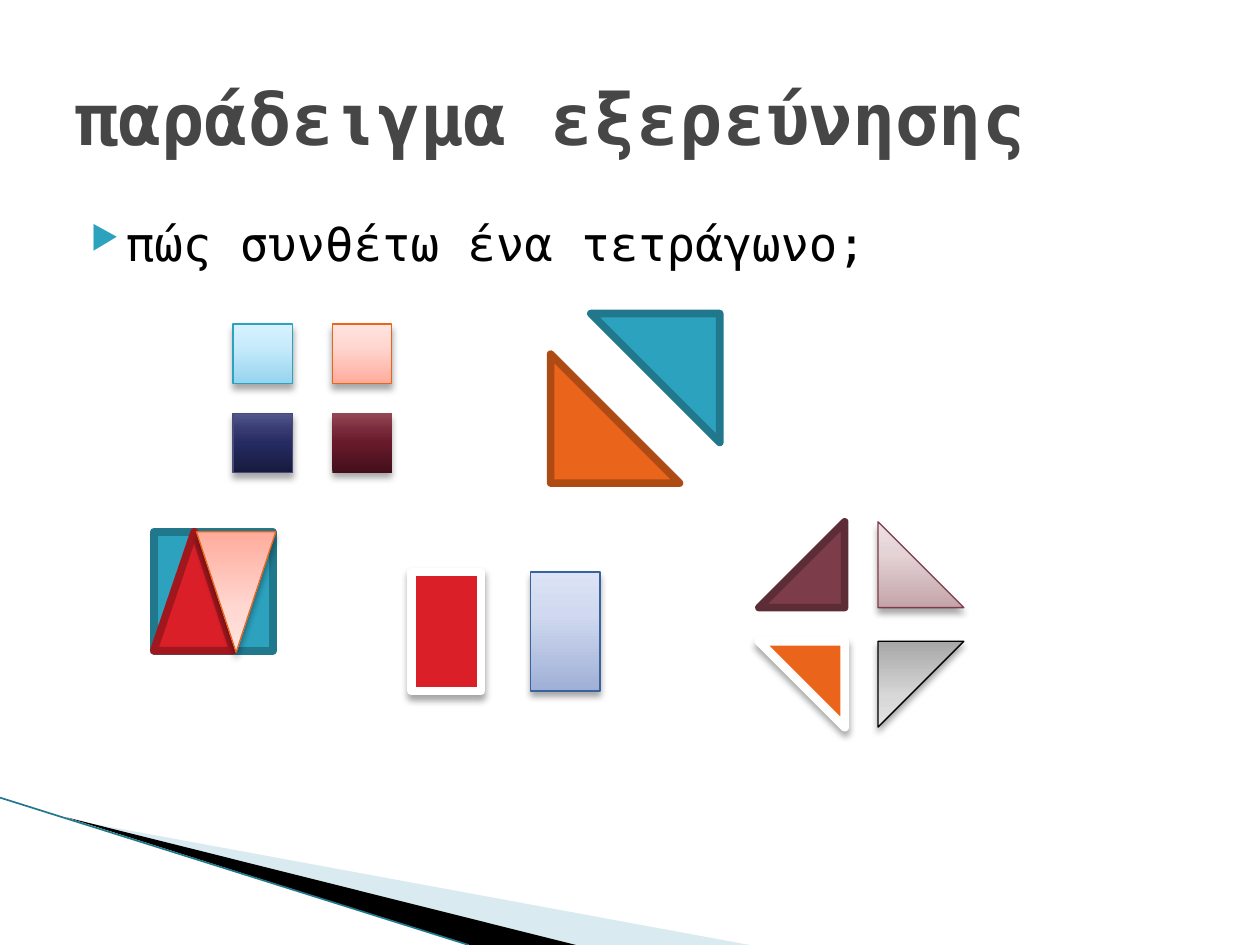
from lxml import etree
from pptx import Presentation
from pptx.dml.color import RGBColor
from pptx.enum.shapes import MSO_CONNECTOR, MSO_SHAPE
from pptx.enum.text import MSO_ANCHOR
from pptx.oxml.ns import qn
from pptx.util import Cm, Pt

SQUARE = MSO_SHAPE.RECTANGLE
RIGHT_TRIANGLE = MSO_SHAPE.RIGHT_TRIANGLE
TRIANGLE = MSO_SHAPE.ISOSCELES_TRIANGLE
STRAIGHT = MSO_CONNECTOR.STRAIGHT
MIDDLE = MSO_ANCHOR.MIDDLE

FONT = "DejaVu Sans Mono"
BLACK = RGBColor(0x00, 0x00, 0x00)
WHITE = RGBColor(0xFF, 0xFF, 0xFF)
GREY = RGBColor(0x46, 0x46, 0x46)
TEAL = RGBColor(0x2D, 0xA2, 0xBF)
DARK_TEAL = RGBColor(0x21, 0x78, 0x8D)
PALE_BLUE = RGBColor(0xA0, 0xCB, 0xDC)
ORANGE = RGBColor(0xEB, 0x64, 0x1B)
DARK_ORANGE = RGBColor(0xAE, 0x4A, 0x14)
RED = RGBColor(0xDA, 0x1F, 0x28)
DARK_RED = RGBColor(0xA1, 0x17, 0x1E)
PLUM = RGBColor(0x7D, 0x3C, 0x4A)
DARK_PLUM = RGBColor(0x5C, 0x2C, 0x37)
BLUE = RGBColor(0x39, 0x63, 0x9D)
INDIGO = RGBColor(0x47, 0x4B, 0x78)


def gradient(positions, *colours):
    """Pair stop positions with colours, from the bottom up."""
    return [(pos, RGBColor.from_string(c)) for pos, c in zip(positions, colours)]


SOFT, DEEP = (0, 65, 100), (0, 50, 70, 100)
SKY_FADE = gradient(SOFT, "96D4EE", "C9ECFC", "D7F2FF")
PEACH_FADE = gradient(SOFT, "FFAC9C", "FFD8D2", "FFE4DF")
BLUE_FADE = gradient(SOFT, "9FAFD6", "D0D9EF", "DCE3F6")
PLUM_FADE = gradient(SOFT, "C4A5A9", "E5D4D7", "EEE0E2")
GREY_FADE = gradient(SOFT, "A7A7A7", "D8D8D8", "E4E4E4")
NAVY_FADE = gradient(DEEP, "171A3D", "262B61", "353970", "51568D")
WINE_FADE = gradient(DEEP, "420F1A", "681A2B", "772939", "944755")

THIN, THICK, FRAME = 0.75, 4.33, 5


def add_child(parent, tag, **attributes):
    child = etree.SubElement(parent, qn(tag))
    for name, value in attributes.items():
        child.set(name, str(value))
    return child


def add_colour(parent, colour, alpha=None):
    node = add_child(parent, "a:srgbClr", val=colour)
    if alpha is not None:
        add_child(node, "a:alpha", val=alpha * 1000)


def fill_gradient(shape, stops):
    shape.fill.gradient()
    shape.fill.gradient_angle = 90
    stop_list = shape._element.spPr.find(".//" + qn("a:gsLst"))
    for old_stop in list(stop_list):
        stop_list.remove(old_stop)
    for position, colour in stops:
        add_colour(add_child(stop_list, "a:gs", pos=position * 1000), colour)


def add_shadow(shape, alpha=35, blur=4):
    effects = shape._element.spPr.find(qn("a:effectLst"))
    shadow = add_child(effects, "a:outerShdw", blurRad=Pt(blur), dist=Pt(3),
                       dir=90 * 60000, rotWithShape=0)
    add_colour(shadow, BLACK, alpha)


def add_piece(slide, kind, left, top, width, height, fill, line, weight,
              rotation=0, flip=None):
    """Add one puzzle piece; a list as fill means gradient stops."""
    piece = slide.shapes.add_shape(kind, Cm(left), Cm(top), Cm(width), Cm(height))
    piece.shadow.inherit = False
    piece.rotation = rotation
    if flip:
        piece._element.spPr.find(qn("a:xfrm")).set(flip, "1")
    if isinstance(fill, list):
        fill_gradient(piece, fill)
    else:
        piece.fill.solid()
        piece.fill.fore_color.rgb = fill
    if line is None:
        piece.line.fill.background()
    else:
        piece.line.color.rgb = line
        piece.line.width = Pt(weight)
    if weight != THICK:
        add_shadow(piece)
    return piece


def add_wedge(slide, points, colour, alpha):
    start, *others = [(Cm(x), Cm(y)) for x, y in points]
    builder = slide.shapes.build_freeform(*start, scale=1.0)
    builder.add_line_segments(others, close=True)
    wedge = builder.convert_to_shape()
    wedge.shadow.inherit = False
    wedge.fill.solid()
    wedge.fill.fore_color.rgb = colour
    add_child(wedge._element.spPr.find(".//" + qn("a:srgbClr")), "a:alpha",
              val=alpha * 1000)
    wedge.line.fill.background()


def add_corner(slide):
    add_wedge(slide, [(1.4, 16.52), (15.11, 19.05), (11.58, 19.05)], PALE_BLUE, 40)
    add_wedge(slide, [(1.35, 16.48), (11.61, 19.05), (9.45, 19.05)], BLACK, 100)
    edge = slide.shapes.add_connector(STRAIGHT, 0, Cm(16.08), Cm(9.45), Cm(19.05))
    edge.line.color.rgb = DARK_TEAL
    edge.line.width = Pt(0.95)
    add_child(edge._element.spPr, "a:effectLst")


def add_text(slide, text, top, height, size, colour, bold=False, bullet=None):
    box = slide.shapes.add_textbox(Cm(1.27), Cm(top), Cm(22.86), Cm(height))
    frame = box.text_frame
    frame.word_wrap = True
    frame.text = text
    paragraph = frame.paragraphs[0]
    if bullet:
        properties = paragraph._p.get_or_add_pPr()
        properties.set("marL", str(Cm(1.02)))
        properties.set("indent", str(Cm(-0.71)))
        add_colour(add_child(properties, "a:buClr"), TEAL)
        add_child(properties, "a:buSzPct", val=68000)
        add_child(properties, "a:buChar", char=bullet)
    font = paragraph.runs[0].font
    font.name, font.size, font.bold = FONT, Pt(size), bold
    font.color.rgb = colour
    return frame


def add_four_squares(slide):
    fills = [(SKY_FADE, TEAL), (PEACH_FADE, ORANGE),
             (NAVY_FADE, INDIGO), (WINE_FADE, None)]
    for i, (fill, line) in enumerate(fills):
        row, column = divmod(i, 2)
        add_piece(slide, SQUARE, 4.7 + 2 * column, 6.53 + 1.8 * row, 1.2, 1.2,
                  fill, line, THIN)


def add_two_rectangles(slide):
    add_piece(slide, SQUARE, 8.3, 11.53, 1.4, 2.4, RED, WHITE, FRAME)
    add_piece(slide, SQUARE, 10.7, 11.53, 1.4, 2.4, BLUE_FADE, BLUE, THIN)


def add_four_triangles(slide):
    triangles = [(PLUM, DARK_PLUM, THICK, 0, "flipH"),
                 (PLUM_FADE, PLUM, THIN, 0, None),
                 (ORANGE, WHITE, FRAME, 90, "flipV"),
                 (GREY_FADE, BLACK, THIN, 0, "flipV")]
    for i, style in enumerate(triangles):
        row, column = divmod(i, 2)
        add_piece(slide, RIGHT_TRIANGLE, 15.3 + 2.4 * column, 10.52 + 2.41 * row,
                  1.73, 1.73, *style)


def add_layered_square(slide):
    add_piece(slide, SQUARE, 3.1, 10.72, 2.4, 2.4, TEAL, DARK_TEAL, THICK)
    upright = add_piece(slide, TRIANGLE, 3.1, 10.72, 1.6, 2.4, RED, DARK_RED, THICK)
    upright.adjustments[0] = 0.51
    add_piece(slide, TRIANGLE, 3.96, 10.72, 1.6, 2.43, PEACH_FADE, ORANGE, THIN, 180)


def add_two_triangles(slide):
    add_piece(slide, RIGHT_TRIANGLE, 11.91, 6.32, 2.6, 2.6, TEAL, DARK_TEAL, THICK, 180)
    add_piece(slide, RIGHT_TRIANGLE, 11.1, 7.14, 2.6, 2.6, ORANGE, DARK_ORANGE, THICK)


def main():
    deck = Presentation()
    deck.slide_width, deck.slide_height = Cm(25.4), Cm(19.05)
    slide = deck.slides.add_slide(deck.slide_layouts[6])
    add_corner(slide)
    add_text(slide, "πώς συνθέτω ένα τετράγωνο;", 4.19, 12.5, 27, BLACK, bullet="▶")
    title = add_text(slide, "παράδειγμα εξερεύνησης", 0.76, 3.18, 41, GREY, bold=True)
    title.vertical_anchor = MIDDLE
    add_four_squares(slide)
    add_two_rectangles(slide)
    add_four_triangles(slide)
    add_layered_square(slide)
    add_two_triangles(slide)
    deck.save("out.pptx")


if __name__ == "__main__":
    main()
